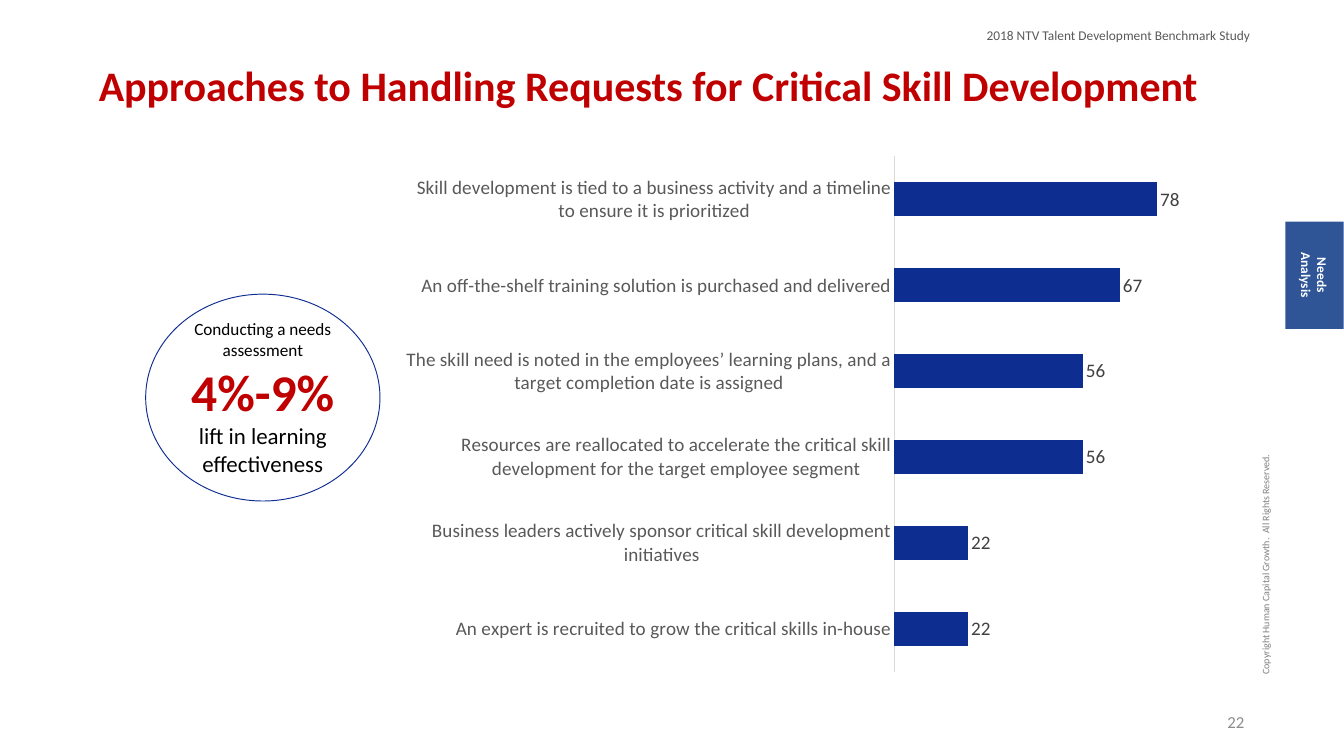
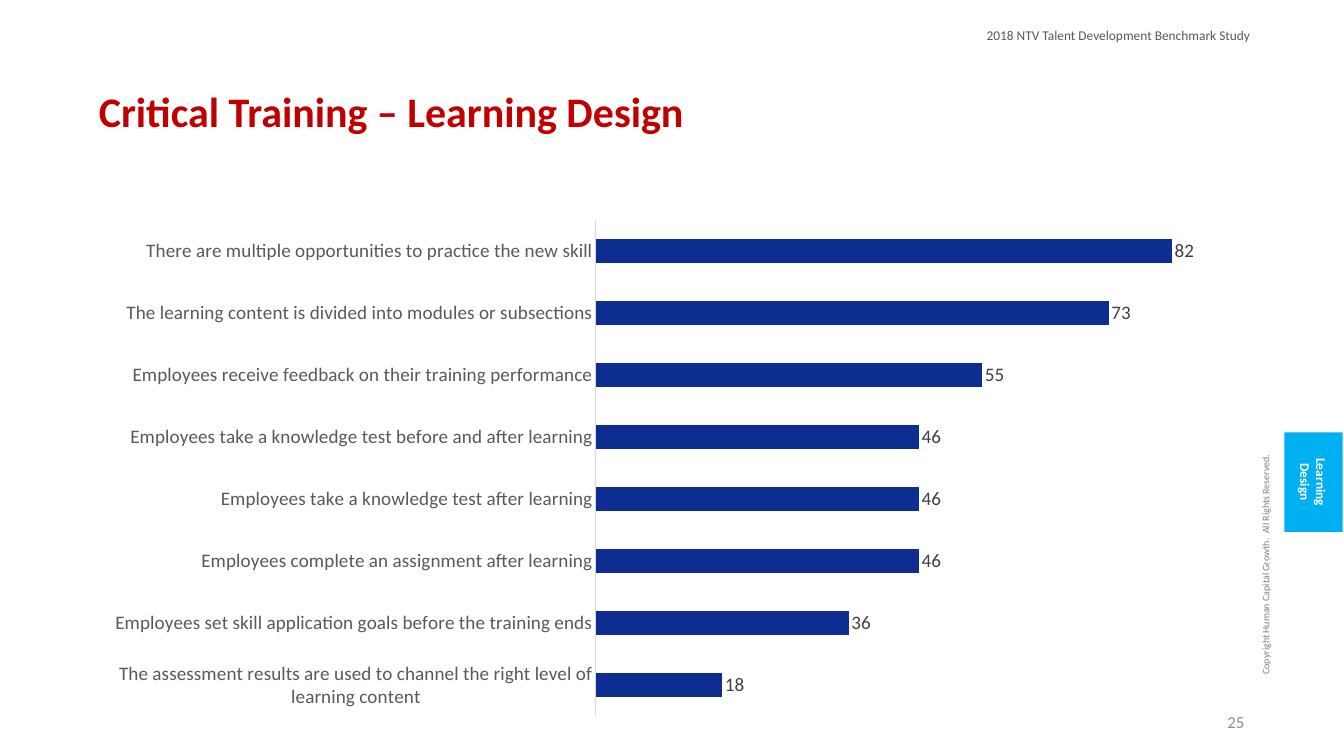
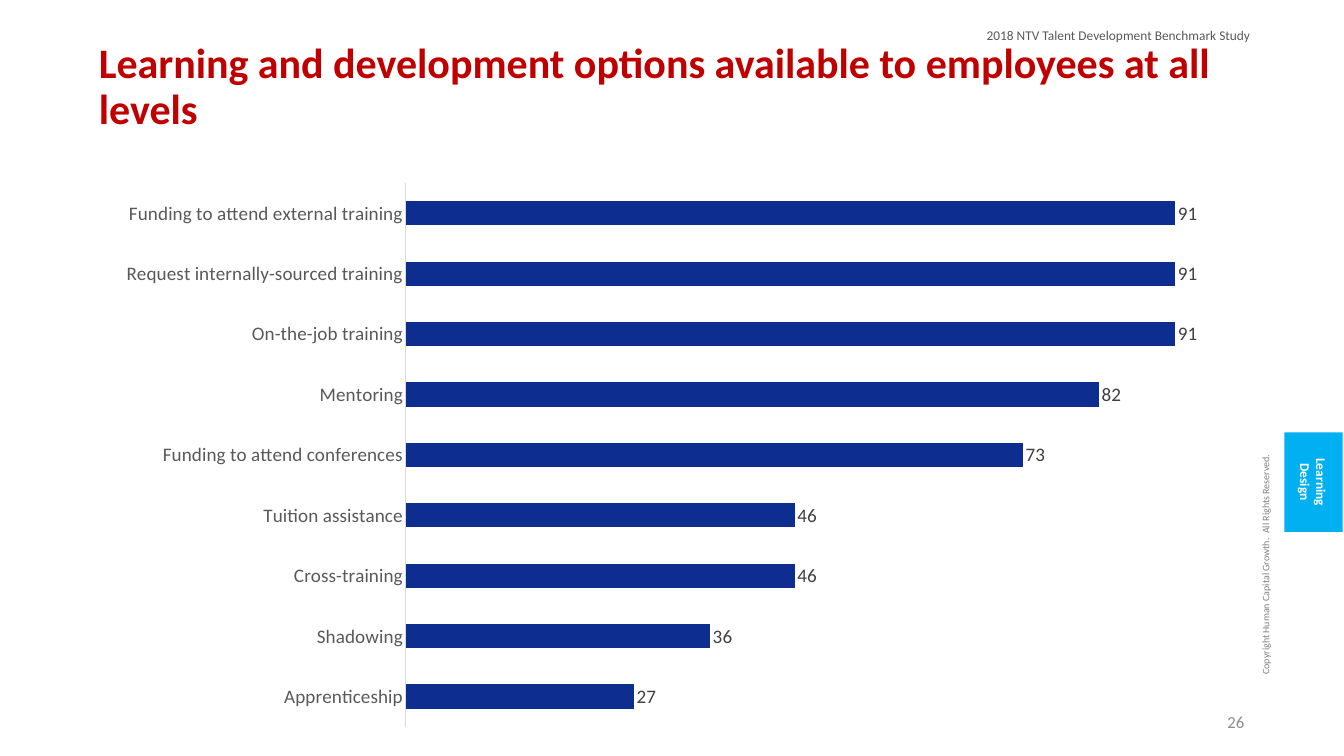
from pptx import Presentation
from pptx.chart.data import CategoryChartData
from pptx.dml.color import RGBColor
from pptx.enum.chart import XL_CHART_TYPE as ChartType, XL_LABEL_POSITION as LabelPosition
from pptx.enum.chart import XL_TICK_LABEL_POSITION as TickLabels, XL_TICK_MARK as TickMark
from pptx.enum.shapes import MSO_SHAPE as Preset
from pptx.enum.text import MSO_ANCHOR as Anchor, PP_ALIGN as Align
from pptx.util import Inches, Pt

FONT = "Calibri"
COLORS = {
    "title": "C00000", "bar": "0E2D91", "black": "000000", "white": "FFFFFF",
    "header": "595959", "copyright": "808080", "page": "8C8C8C",
    "axis": "D9D9D9", "value": "404040",
    "needs": "2F5597", "design": "00B0F0",
}
HEADER = "2018 NTV Talent Development Benchmark Study"
COPYRIGHT = "Copyright Human Capital Growth.  All Rights Reserved."

# Section tabs: lines, colour, box before rotation
NEEDS_TAB = (["Needs", "Analysis"], "needs", (18.35, 3.58, 1.56, 0.85))
DESIGN_TAB = (["Learning", "Design"], "design", (18.39, 6.59, 1.45, 0.85))

# Callout lines: text, size, colour, bold
CALLOUT_BOX = (2.12, 4.28, 3.41, 3.01)
CALLOUT = [
    ("Conducting a needs assessment", 18, "black", False),
    ("4%-9%", 54, "title", True),
    ("lift in learning effectiveness", 24, "black", False),
]

SLIDES = [
    {
        "title": "Approaches to Handling Requests for Critical Skill Development",
        "raised": True, "page": 22, "tab": NEEDS_TAB, "callout": CALLOUT,
        "chart_box": (5.83, 2.12, 11.84, 7.81), "axis_max": 90, "format": "0",
        "bars": [
            ("Skill development is tied to a business activity and a timeline "
             "to ensure it is prioritized", 78),
            ("An off-the-shelf training solution is purchased and delivered", 67),
            ("The skill need is noted in the employees’ learning plans, and a "
             "target completion date is assigned", 56),
            ("Resources are reallocated to accelerate the critical skill "
             "development for the target employee segment", 56),
            ("Business leaders actively sponsor critical skill development initiatives", 22),
            ("An expert is recruited to grow the critical skills in-house", 22),
        ],
    },
    {
        "title": "Critical Training – Learning Design",
        "raised": False, "page": 25, "tab": DESIGN_TAB, "callout": [],
        "chart_box": (1.34, 3.05, 16.87, 7.52), "axis_max": 90, "format": "0",
        "bars": [
            ("There are multiple opportunities to practice the new skill", 82),
            ("The learning content is divided into modules or subsections", 73),
            ("Employees receive feedback on their training performance", 55),
            ("Employees take a knowledge test before and after learning", 46),
            ("Employees take a knowledge test after learning", 46),
            ("Employees complete an assignment after learning", 46),
            ("Employees set skill application goals before the training ends", 36),
            ("The assessment results are used to channel the right level of "
             "learning content", 18),
        ],
    },
    {
        "title": "Learning and development options available to employees at all levels",
        "raised": True, "page": 26, "tab": DESIGN_TAB, "callout": [],
        "chart_box": (1.5, 2.5, 17.05, 8.24), "axis_max": 100, "format": "###0",
        "bars": [
            ("Funding to attend external training", 91),
            ("Request internally-sourced training", 91),
            ("On-the-job training", 91),
            ("Mentoring", 82),
            ("Funding to attend conferences", 73),
            ("Tuition assistance", 46),
            ("Cross-training", 46),
            ("Shadowing", 36),
            ("Apprenticeship", 27),
        ],
    },
]


def color(name):
    return RGBColor.from_string(COLORS[name])


def inches(box):
    return [Inches(length) for length in box]


def style_font(font, size, color_name, bold=False):
    font.name, font.size, font.bold = FONT, Pt(size), bold
    font.color.rgb = color(color_name)


def write(shape, lines, align=Align.LEFT, anchor=Anchor.MIDDLE, wrap=True):
    """Fill a shape with (text, size, colour, bold) lines, one paragraph each."""
    frame = shape.text_frame
    frame.word_wrap, frame.vertical_anchor = wrap, anchor
    frame.text = "\n".join(line[0] for line in lines)
    for paragraph, (_, *style) in zip(frame.paragraphs, lines):
        paragraph.alignment = align
        style_font(paragraph.font, *style)
    return frame


def add_text(slide, box, text, size, color_name, bold=False, **layout):
    shape = slide.shapes.add_textbox(*inches(box))
    write(shape, [(text, size, color_name, bold)], **layout)
    return shape


def add_preset(slide, preset, box):
    shape = slide.shapes.add_shape(preset, *inches(box))
    shape.shadow.inherit = False
    return shape


def add_frame(slide, page):
    """Header, copyright line and page number, the same on every slide."""
    add_text(slide, (16.58, 7.88, 3.67, 0.4), COPYRIGHT, 10.5, "copyright").rotation = 270
    add_text(slide, (14.26, 0.35, 4.16, 0.34), HEADER, 14, "header",
             anchor=Anchor.TOP, wrap=False)
    add_text(slide, (13.81, 10.2, 4.4, 0.59), str(page), 17.6, "page", align=Align.RIGHT)


def add_title(slide, text, raised):
    title = add_text(slide, (1.34, 0.59, 16.87, 2.13), text, 44, "title", True)
    title.text_frame.paragraphs[0].line_spacing = 0.9
    if raised:
        title.text_frame.margin_bottom = Inches(0.8)


def add_tab(slide, lines, fill, box):
    tab = add_preset(slide, Preset.RECTANGLE, box)
    tab.rotation = 90
    tab.fill.solid()
    tab.fill.fore_color.rgb = color(fill)
    tab.line.fill.background()
    frame = write(tab, [(line, 14, "white", True) for line in lines], Align.CENTER)
    frame.margin_left = frame.margin_right = Inches(0.15)
    frame.margin_top = frame.margin_bottom = Inches(0.07)


def add_callout(slide, lines):
    callout = add_preset(slide, Preset.OVAL, CALLOUT_BOX)
    callout.fill.background()
    callout.line.color.rgb = color("bar")
    callout.line.width = Pt(1)
    write(callout, lines, Align.CENTER)


def add_bar_chart(slide, box, bars, axis_max, number_format):
    data = CategoryChartData(number_format=number_format)
    data.categories = [label for label, _ in bars]
    data.add_series("Series 1", [value for _, value in bars])
    chart = slide.shapes.add_chart(ChartType.BAR_CLUSTERED, *inches(box), data).chart
    chart.has_legend = chart.has_title = False
    style_font(chart.font, 20, "black")

    categories = chart.category_axis
    categories.reverse_order = True
    categories.major_tick_mark = categories.minor_tick_mark = TickMark.NONE
    categories.tick_label_position = TickLabels.NEXT_TO_AXIS
    categories.format.line.color.rgb = color("axis")
    categories.format.line.width = Pt(0.75)
    style_font(categories.tick_labels.font, 20, "header")

    values = chart.value_axis
    values.minimum_scale, values.maximum_scale = 0, axis_max
    values.has_major_gridlines = values.visible = False

    plot = chart.plots[0]
    plot.gap_width, plot.overlap, plot.vary_by_categories = 150, -25, False
    series = plot.series[0]
    series.format.fill.solid()
    series.format.fill.fore_color.rgb = color("bar")
    labels = series.data_labels
    labels.show_value = True
    labels.position = LabelPosition.OUTSIDE_END
    labels.number_format, labels.number_format_is_linked = number_format, False
    style_font(labels.font, 20, "value")


def main():
    presentation = Presentation()
    presentation.slide_width, presentation.slide_height = Inches(19.56), Inches(11)
    for content in SLIDES:
        slide = presentation.slides.add_slide(presentation.slide_layouts[6])
        add_frame(slide, content["page"])
        add_bar_chart(slide, content["chart_box"], content["bars"],
                      content["axis_max"], content["format"])
        add_title(slide, content["title"], content["raised"])
        add_tab(slide, *content["tab"])
        if content["callout"]:
            add_callout(slide, content["callout"])
    presentation.save("out.pptx")


if __name__ == "__main__":
    main()
